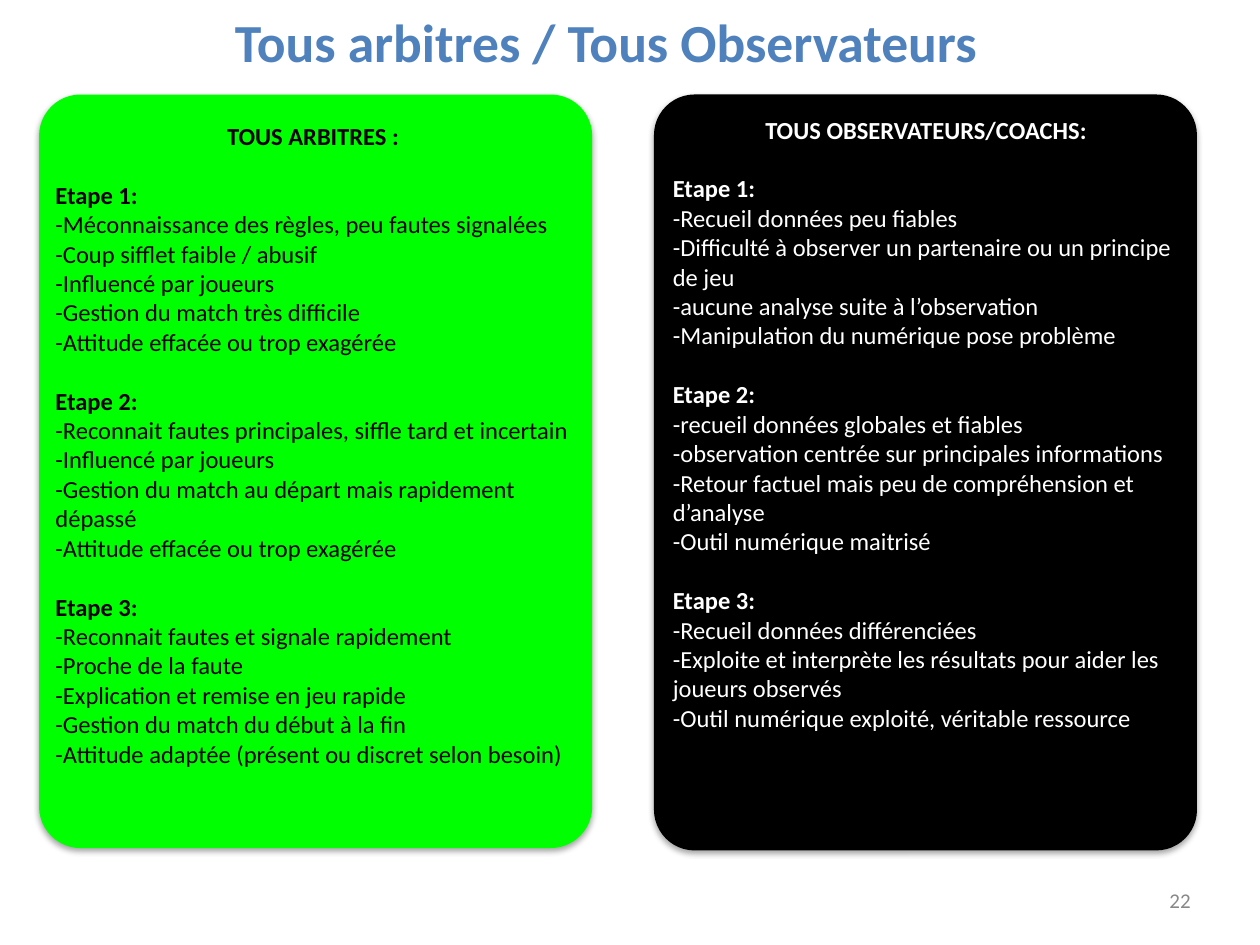
"""Build the slide comparing the stages of referees and observers."""
from lxml import etree
from pptx import Presentation
from pptx import util as u
from pptx.dml.color import RGBColor
from pptx.enum import shapes, text
from pptx.oxml.ns import qn

COLORS = {"green": "00FF00", "black": "000000", "white": "FFFFFF",
          "blue": "4F81BD", "grey": "888888"}
FONT = "Calibri"
INSET = 3.6
STEP_GAP = 16.8

REFEREE_STEPS = [
    ["-Méconnaissance des règles, peu fautes signalées",
     "-Coup sifflet faible / abusif",
     "-Influencé par joueurs",
     "-Gestion du match très difficile",
     "-Attitude effacée ou trop exagérée"],
    ["-Reconnait fautes principales, siffle tard et incertain",
     "-Influencé par joueurs",
     "-Gestion du match au départ mais rapidement dépassé",
     "-Attitude effacée ou trop exagérée"],
    ["-Reconnait fautes et signale rapidement",
     "-Proche de la faute",
     "-Explication et remise en jeu rapide",
     "-Gestion du match du début à la fin",
     "-Attitude adaptée (présent ou discret selon besoin)"],
]
OBSERVER_STEPS = [
    ["-Recueil données peu fiables",
     "-Difficulté à observer un partenaire ou un principe de jeu",
     "-aucune analyse suite à l’observation",
     "-Manipulation du numérique pose problème"],
    ["-recueil données globales et fiables",
     "-observation centrée sur principales informations",
     "-Retour factuel mais peu de compréhension et d’analyse",
     "-Outil numérique maitrisé"],
    ["-Recueil données différenciées",
     "-Exploite et interprète les résultats pour aider les joueurs observés",
     "-Outil numérique exploité, véritable ressource"],
]


def points(box):
    return [u.Pt(length) for length in box]


def rgb(color):
    return RGBColor.from_string(COLORS[color])


def set_frame(frame, anchor, wrap=True):
    frame.word_wrap = wrap
    frame.vertical_anchor = anchor
    frame.margin_left = frame.margin_right = u.Pt(INSET)
    frame.margin_top = frame.margin_bottom = u.Pt(INSET)


def write(paragraph, words, size, color, bold=False, align=text.PP_ALIGN.LEFT):
    paragraph.text = words
    paragraph.alignment = align
    for run in paragraph.runs:
        run.font.name = FONT
        run.font.size = u.Pt(size)
        run.font.bold = bold
        run.font.color.rgb = rgb(color)


def add_label(slide, box, words, size, color, bold, align, wrap):
    label = slide.shapes.add_textbox(*points(box))
    set_frame(label.text_frame, text.MSO_ANCHOR.MIDDLE, wrap)
    write(label.text_frame.paragraphs[0], words, size, color, bold, align)
    return label


def add_block(group, kind, box, fill):
    block = group.shapes.add_shape(kind, *points(box))
    block.shadow.inherit = False
    block.fill.solid()
    block.fill.fore_color.rgb = rgb(fill)
    block.line.fill.background()
    return block


def add_soft_shadow(card):
    effects = card._element.spPr.find(qn("a:effectLst"))
    shadow = etree.SubElement(effects, qn("a:outerShdw"), blurRad=str(u.Pt(3)),
                              dist=str(u.Pt(1.8)), dir="5400000", rotWithShape="0")
    shade = etree.SubElement(shadow, qn("a:srgbClr"), val=COLORS["black"])
    etree.SubElement(shade, qn("a:alpha"), val="35000")


def add_panel(slide, card_box, body_box, fill, ink, heading, steps):
    group = slide.shapes.add_group_shape()
    card = add_block(group, shapes.MSO_SHAPE.ROUNDED_RECTANGLE, card_box, fill)
    card.adjustments[0] = 0.075
    add_soft_shadow(card)
    body = add_block(group, shapes.MSO_SHAPE.RECTANGLE, body_box, fill).text_frame
    set_frame(body, text.MSO_ANCHOR.TOP)
    write(body.paragraphs[0], heading, 14, ink, True, text.PP_ALIGN.CENTER)
    for number, remarks in enumerate(steps, 1):
        step = body.add_paragraph()
        step.space_before = u.Pt(STEP_GAP)
        write(step, f"Etape {number}:", 14, ink, True)
        for remark in remarks:
            write(body.add_paragraph(), remark, 14, ink)


def main():
    deck = Presentation()
    deck.slide_width, deck.slide_height = u.Pt(720), u.Pt(540)
    slide = deck.slides.add_slide(deck.slide_layouts[6])
    add_label(slide, (663.8, 504, 20.2, 20.9), "22", 12, "grey", False,
              text.PP_ALIGN.RIGHT, False)
    add_panel(slide, (373.7, 54, 310.3, 432), (380.9, 61.9, 296.6, 399.6),
              "black", "white", "TOUS OBSERVATEURS/COACHS:", OBSERVER_STEPS)
    add_panel(slide, (22.3, 54, 316.1, 430.6), (28.1, 65.5, 301.7, 402.5),
              "green", "black", "TOUS ARBITRES :", REFEREE_STEPS)
    title = add_label(slide, (22.3, 7.2, 648, 38.9), "Tous arbitres / Tous Observateurs",
                      30.6, "blue", True, text.PP_ALIGN.CENTER, True)
    title.text_frame.paragraphs[0].line_spacing = 0.8
    deck.save("out.pptx")


if __name__ == "__main__":
    main()
